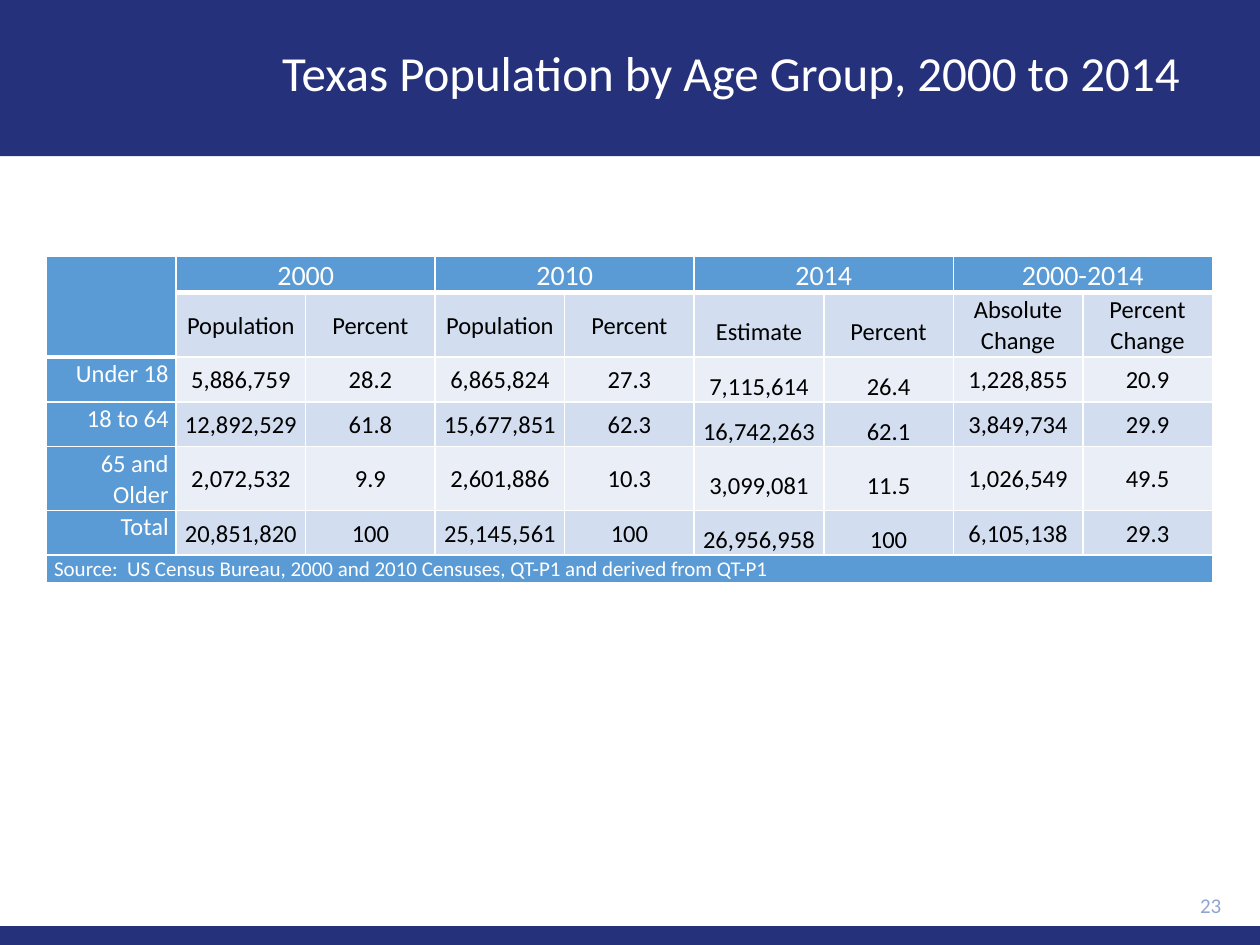
import pptx
import pptx.dml.color
import pptx.enum.shapes
import pptx.enum.text
import pptx.oxml
import pptx.oxml.ns
import pptx.util

Cm = pptx.util.Cm
Pt = pptx.util.Pt
RGBColor = pptx.dml.color.RGBColor
ALIGN = pptx.enum.text.PP_ALIGN
ANCHOR = pptx.enum.text.MSO_ANCHOR

NAVY = RGBColor(0x25, 0x32, 0x7B)
BLUE = RGBColor(0x5B, 0x9B, 0xD5)
DARK_BAND = RGBColor(0xD2, 0xDE, 0xEF)
LIGHT_BAND = RGBColor(0xEA, 0xEF, 0xF7)
PALE_BLUE = RGBColor(0x8F, 0xA5, 0xD1)
WHITE = RGBColor(0xFF, 0xFF, 0xFF)
BLACK = RGBColor(0, 0, 0)

PERIODS = ["2000", "2010", "2014", "2000-2014"]
BODY = [
    ["", "Population", "Percent", "Population", "Percent", "Estimate", "Percent",
     "Absolute Change", "Percent Change"],
    ["Under 18", "5,886,759", "28.2", "6,865,824", "27.3", "7,115,614", "26.4",
     "1,228,855", "20.9"],
    ["18 to 64", "12,892,529", "61.8", "15,677,851", "62.3", "16,742,263", "62.1",
     "3,849,734", "29.9"],
    ["65 and Older", "2,072,532", "9.9", "2,601,886", "10.3", "3,099,081", "11.5",
     "1,026,549", "49.5"],
    ["Total", "20,851,820", "100", "25,145,561", "100", "26,956,958", "100",
     "6,105,138", "29.3"],
]
SOURCE = "Source:  US Census Bureau, 2000 and 2010 Censuses, QT-P1 and derived from QT-P1"
ROW_HEIGHTS = [0.64, 1.3, 0.84, 0.84, 0.84, 0.84, 0.56]
COLUMN_COUNT = 9
CHANGE_COLUMNS = (7, 8)
ESTIMATE_COLUMNS = (5, 6)


def write(frame, text, size, color, align, line_spacing=1.0):
    paragraph = frame.paragraphs[0]
    paragraph.alignment = align
    paragraph.line_spacing = line_spacing
    run = paragraph.add_run()
    run.text = text
    run.font.name = "Calibri"
    run.font.size = Pt(size)
    run.font.color.rgb = color
    return paragraph


def add_borders(cell, bottom_width):
    """Put white lines round a cell; call before setting its fill."""
    properties = cell._tc.get_or_add_tcPr()
    for side, width in (("L", 1), ("R", 1), ("T", 1), ("B", bottom_width)):
        properties.append(pptx.oxml.parse_xml(
            f'<a:ln{side} {pptx.oxml.ns.nsdecls("a")} w="{Pt(width)}">'
            f'<a:solidFill><a:srgbClr val="{WHITE}"/></a:solidFill></a:ln{side}>'))


presentation = pptx.Presentation()
presentation.slide_width, presentation.slide_height = Cm(25.4), Cm(19.05)
slide = presentation.slides.add_slide(presentation.slide_layouts[5])

# Header and footer bands, with the title in front of them
for top, height in ((0, 3.15), (18.67, 0.38)):
    band = slide.shapes.add_shape(
        pptx.enum.shapes.MSO_SHAPE.RECTANGLE, Cm(0), Cm(top), Cm(25.4), Cm(height))
    band.shadow.inherit = False
    band.fill.solid()
    band.fill.fore_color.rgb = NAVY
    band.line.fill.background()

title = slide.shapes.title
title.left, title.top, title.width, title.height = Cm(4.32), Cm(0.25), Cm(20.83), Cm(2.54)
title.text_frame.vertical_anchor = ANCHOR.MIDDLE
write(title.text_frame, "Texas Population by Age Group, 2000 to 2014",
      28, WHITE, ALIGN.CENTER, 0.9)
slide.shapes._spTree.append(title._element)

# Table grid
population = slide.shapes.add_table(
    len(ROW_HEIGHTS), COLUMN_COUNT, Cm(0.94), Cm(5.16), Cm(23.5), Cm(6.45)).table
for column in population.columns:
    column.width = Cm(23.5 / COLUMN_COUNT)
for row, height in zip(population.rows, ROW_HEIGHTS):
    row.height = Cm(height)

last_row = len(ROW_HEIGHTS) - 1
for r in range(len(ROW_HEIGHTS)):
    for c in range(COLUMN_COUNT):
        cell = population.cell(r, c)
        cell.margin_left = cell.margin_right = Cm(0.15)
        cell.margin_top = cell.margin_bottom = Cm(0)
        add_borders(cell, 3 if r == 0 or (r == 1 and c == 0) else 1)
        cell.fill.solid()
        if r in (0, last_row) or c == 0:
            cell.fill.fore_color.rgb = BLUE
        else:
            cell.fill.fore_color.rgb = DARK_BAND if r % 2 else LIGHT_BAND

# Period headings and source line
population.cell(0, 0).merge(population.cell(1, 0))
for c, period in zip(range(1, COLUMN_COUNT, 2), PERIODS):
    heading = population.cell(0, c)
    heading.merge(population.cell(0, c + 1))
    write(heading.text_frame, period, 16, WHITE, ALIGN.CENTER, 1.07)
source_cell = population.cell(last_row, 0)
source_cell.merge(population.cell(last_row, COLUMN_COUNT - 1))
write(source_cell.text_frame, SOURCE, 12, WHITE, ALIGN.LEFT, 1.07)

# Column headings, age groups and figures
for r, values in enumerate(BODY, start=1):
    for c, value in enumerate(values):
        if not value:
            continue
        cell = population.cell(r, c)
        if c == 0:
            write(cell.text_frame, value, 14, WHITE, ALIGN.RIGHT, 1.07)
            continue
        spacing = 1.5 if c in ESTIMATE_COLUMNS else 1.07
        figure = write(cell.text_frame, value, 14, BLACK, ALIGN.CENTER, spacing)
        if r > 1 or c not in CHANGE_COLUMNS:
            cell.vertical_anchor = ANCHOR.MIDDLE
        if r > 1 and c in CHANGE_COLUMNS:
            figure.space_after = Pt(8)

page_number = slide.shapes.add_textbox(Cm(22.61), Cm(17.81), Cm(2.26), Cm(0.86)).text_frame
page_number.word_wrap = True
page_number.vertical_anchor = ANCHOR.MIDDLE
write(page_number, "23", 12, PALE_BLUE, ALIGN.RIGHT)

presentation.save("out.pptx")
